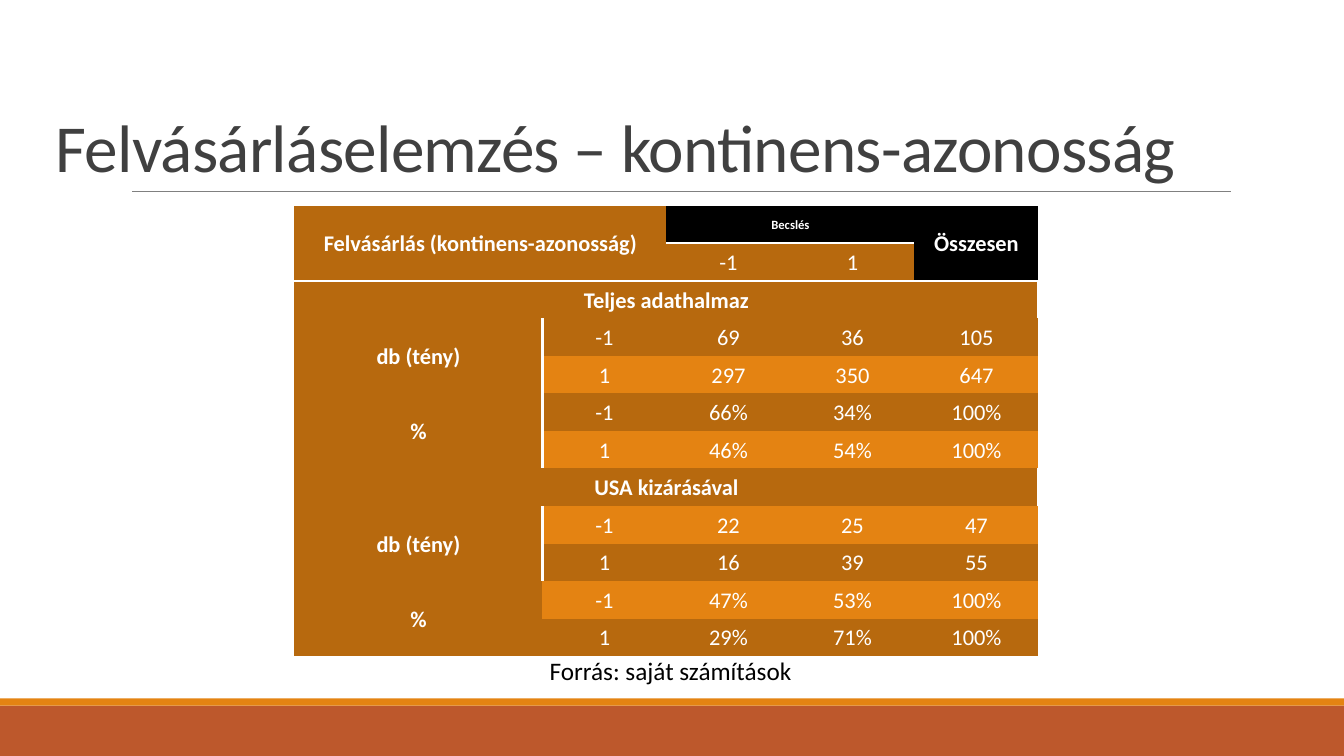
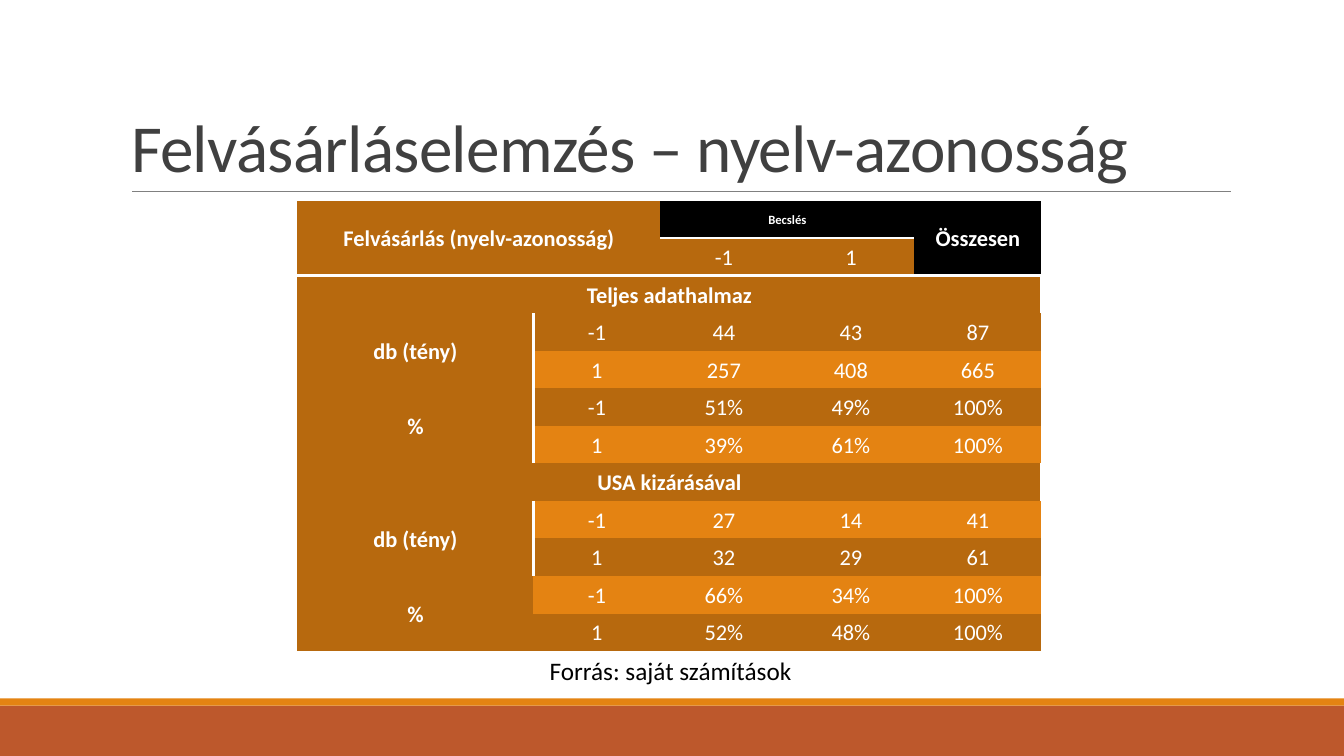
from dataclasses import dataclass

from lxml import etree
from pptx import Presentation
from pptx.dml.color import RGBColor
from pptx.enum.shapes import MSO_CONNECTOR, MSO_SHAPE
from pptx.enum.text import MSO_ANCHOR, MSO_AUTO_SIZE, PP_ALIGN
from pptx.oxml.ns import qn
from pptx.util import Inches, Pt

RECT = MSO_SHAPE.RECTANGLE
STRAIGHT = MSO_CONNECTOR.STRAIGHT
LEFT, CENTER = PP_ALIGN.LEFT, PP_ALIGN.CENTER
MIDDLE, BOTTOM = MSO_ANCHOR.MIDDLE, MSO_ANCHOR.BOTTOM
NO_FIT = MSO_AUTO_SIZE.NONE
TITLE_ONLY = 5
NO_TABLE_STYLE = "{2D5ABB26-0587-4C30-8999-92F81FD0307C}"


@dataclass(frozen=True)
class Theme:
    font: str = "Calibri"
    band: str = "BD582C"
    light: str = "E48312"
    dark: str = "B7690E"
    black: str = "000000"
    white: str = "FFFFFF"
    rule: str = "808080"
    title: str = "404040"
    title_size: float = 48
    source_size: float = 18
    cell_size: float = 16
    small_size: float = 9


T = Theme()

SLIDES = [
    {
        "topic": "kontinens-azonosság",
        "title_box": (0.45, 0.31, 12.21, 1.59),
        "table_box": (2.92, 2.04, 7.38, 4.47),
        "side_width": 2.46,
        "counts": [[(69, 36), (297, 350)], [(22, 25), (16, 39)]],
    },
    {
        "topic": "nyelv-azonosság",
        "title_box": (1.2, 0.31, 11, 1.59),
        "table_box": (2.95, 1.99, 7.38, 4.47),
        "side_width": 2.34,
        "counts": [[(44, 43), (257, 408)], [(27, 14), (32, 29)]],
    },
]
SECTIONS = ["Teljes adathalmaz", "USA kizárásával"]
CLASSES = ["-1", "1"]
SOURCE_BOX = (0.29, 6.45, 12.72, 0.4)


def inches(box):
    return [Inches(v) for v in box]


def write(tf, text, size=T.cell_size, color=T.white, bold=False, align=CENTER,
          spacing=None, tracking=None):
    p = tf.paragraphs[0]
    p.alignment = align
    if spacing:
        p.line_spacing = spacing
    r = p.add_run()
    r.text = text
    r.font.name = T.font
    r.font.size = Pt(size)
    r.font.bold = bold
    r.font.color.rgb = RGBColor.from_string(color)
    if tracking:
        r._r.get_or_add_rPr().set("spc", str(int(tracking * 100)))


def add_band(s, box, color):
    sp = s.shapes.add_shape(RECT, *inches(box))
    sp.shadow.inherit = False
    sp.fill.solid()
    sp.fill.fore_color.rgb = RGBColor.from_string(color)
    sp.line.fill.background()
    return sp


def add_rule(s, x1, x2, y):
    line = s.shapes.add_connector(STRAIGHT, *inches((x1, y, x2, y)))
    line.line.color.rgb = RGBColor.from_string(T.rule)
    line.line.width = Pt(0.5)
    etree.SubElement(line.element.spPr, qn("a:effectLst"))
    return line


def decorate_layout(layout, s):
    """Draw the bands and title rule on slide s, then move them to its layout."""
    for ph in list(layout.placeholders):
        if ph.placeholder_format.idx:
            ph.element.getparent().remove(ph.element)
    for sp in (add_band(s, (0, 7, 13.33, 0.5), T.band),
               add_band(s, (0, 6.93, 13.33, 0.07), T.light),
               add_rule(s, 1.31, 12.21, 1.9)):
        layout.shapes.element.append(sp.element)


def add_title(s, box, text):
    sp = s.shapes.title
    sp.left, sp.top, sp.width, sp.height = inches(box)
    tf = sp.text_frame
    tf.word_wrap = True
    tf.auto_size = NO_FIT
    tf.vertical_anchor = BOTTOM
    write(tf, text, size=T.title_size, color=T.title, align=LEFT,
          spacing=0.85, tracking=-0.5)


def add_source(s, box):
    tf = s.shapes.add_textbox(*inches(box)).text_frame
    tf.word_wrap = True
    write(tf, "Forrás: saját számítások", size=T.source_size, color=T.black)


def set_border(cell, side):
    """Add a white border; side is the table tag lnR or lnB."""
    ln = etree.Element(qn(f"a:{side}"), w=str(Pt(2)))
    fill = etree.SubElement(ln, qn("a:solidFill"))
    etree.SubElement(fill, qn("a:srgbClr"), val=T.white)
    cell._tc.get_or_add_tcPr().insert(0, ln)


def fill_cell(table, row, col, text, color=T.dark, rows=1, cols=1, border=None,
              **fmt):
    cell = table.cell(row, col)
    if rows * cols > 1:
        cell.merge(table.cell(row + rows - 1, col + cols - 1))
    cell.fill.solid()
    cell.fill.fore_color.rgb = RGBColor.from_string(color)
    cell.vertical_anchor = MIDDLE
    cell.margin_left = cell.margin_right = Inches(0.05)
    cell.margin_top = cell.margin_bottom = 0
    if border:
        set_border(cell, border)
    write(cell.text_frame, text, spacing=1.07, **fmt)


def fill_header(table, topic):
    fill_cell(table, 0, 0, f"Felvásárlás ({topic})", rows=2, cols=2,
              border="lnB", bold=True)
    fill_cell(table, 0, 2, "Becslés", T.black, cols=2, border="lnB",
              bold=True, size=T.small_size)
    fill_cell(table, 0, 4, "Összesen", T.black, rows=2, border="lnB", bold=True)
    for i, name in enumerate(CLASSES):
        fill_cell(table, 1, 2 + i, name, border="lnB")


def fill_section(table, top, name, counts, last):
    """Fill a heading row, two rows of counts and two of row percentages."""
    fill_cell(table, top, 0, name, cols=5, border="lnR", bold=True)
    full = [(*pair, sum(pair)) for pair in counts]
    shares = [[f"{n / row[-1]:.0%}" for n in row] for row in full]
    for i, (unit, block) in enumerate((("db (tény)", full), ("%", shares))):
        first = top + 1 + 2 * i
        border = None if last and unit == "%" else "lnR"
        fill_cell(table, first, 0, unit, rows=2, border=border, bold=True)
        for row, (label, values) in enumerate(zip(CLASSES, block), first):
            color = T.dark if row % 2 else T.light
            for col, value in enumerate((label, *values), 1):
                fill_cell(table, row, col, str(value), color)


def add_results_table(s, box, side_width, topic, counts):
    n_rows, n_cols = 2 + 5 * len(SECTIONS), 5
    table = s.shapes.add_table(n_rows, n_cols, *inches(box)).table
    table.first_row = table.horz_banding = False
    table._tbl.tblPr.find(qn("a:tableStyleId")).text = NO_TABLE_STYLE
    width, height = box[2:]
    for i, column in enumerate(table.columns):
        column.width = Inches((width - side_width) / (n_cols - 1) if i else side_width)
    for row in table.rows:
        row.height = Inches(height / n_rows)
    fill_header(table, topic)
    for i, (name, pairs) in enumerate(zip(SECTIONS, counts)):
        fill_section(table, 2 + 5 * i, name, pairs, last=i == len(SECTIONS) - 1)


def add_results_slide(prs, layout, topic, title_box, table_box, side_width, counts):
    s = prs.slides.add_slide(layout)
    add_title(s, title_box, f"Felvásárláselemzés – {topic}")
    add_results_table(s, table_box, side_width, topic, counts)
    add_source(s, SOURCE_BOX)
    return s


def main():
    prs = Presentation()
    prs.slide_width, prs.slide_height = inches((13.33, 7.5))
    layout = prs.slide_layouts[TITLE_ONLY]
    slides = [add_results_slide(prs, layout, **content) for content in SLIDES]
    decorate_layout(layout, slides[0])
    prs.save("out.pptx")


if __name__ == "__main__":
    main()
